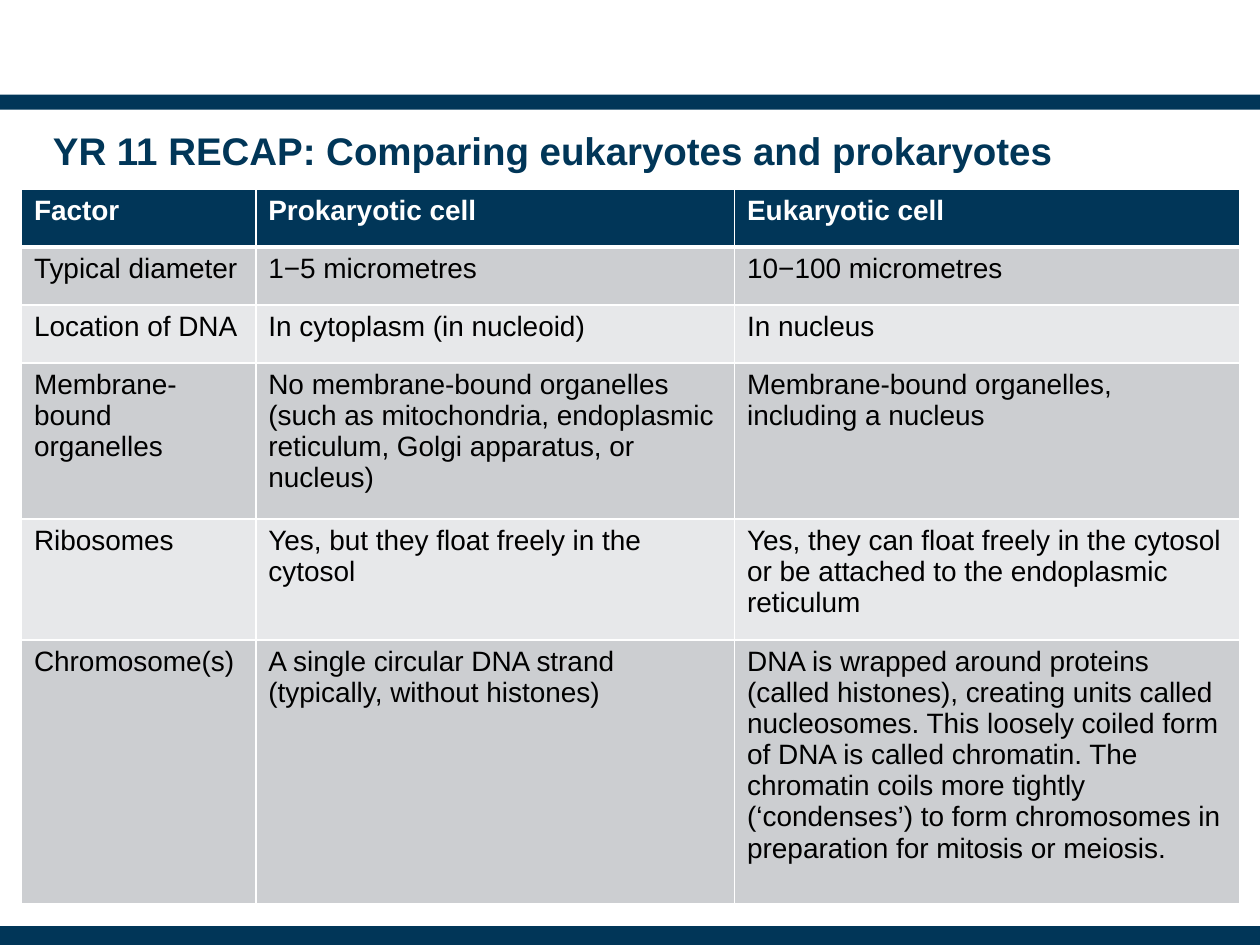
from lxml.etree import SubElement
from pptx import Presentation
from pptx.dml.color import RGBColor
from pptx.enum.shapes import MSO_SHAPE as Shape
from pptx.enum.text import MSO_ANCHOR as Anchor, MSO_AUTO_SIZE as AutoSize, PP_ALIGN as Align
from pptx.oxml.ns import qn
from pptx.util import Inches, Pt

NAVY, WHITE, BLACK = "013658", "FFFFFF", "000000"
BANDS = ("E7E8EA", "CCCED1")

COLUMN_WIDTHS = (1.86, 3.8, 4.01)
ROW_HEIGHTS = (0.46, 0.46, 0.46, 1.24, 0.96, 2.09)
COMPARISON = (
    ("Factor", "Prokaryotic cell", "Eukaryotic cell"),
    ("Typical diameter", "1−5 micrometres", "10−100 micrometres"),
    ("Location of DNA", "In cytoplasm (in nucleoid)", "In nucleus"),
    ("Membrane-bound organelles",
     "No membrane-bound organelles (such as mitochondria, endoplasmic "
     "reticulum, Golgi apparatus, or nucleus)",
     "Membrane-bound organelles, including a nucleus"),
    ("Ribosomes",
     "Yes, but they float freely in the cytosol",
     "Yes, they can float freely in the cytosol or be attached to the "
     "endoplasmic reticulum"),
    ("Chromosome(s)",
     "A single circular DNA strand (typically, without histones)",
     "DNA is wrapped around proteins (called histones), creating units called "
     "nucleosomes. This loosely coiled form of DNA is called chromatin. The "
     "chromatin coils more tightly (‘condenses’) to form chromosomes in "
     "preparation for mitosis or meiosis."),
)


def rgb(value):
    return RGBColor.from_string(value)


class RecapSlide:
    font_name = "Arial"

    def __init__(self, prs):
        self.s = prs.slides.add_slide(prs.slide_layouts[5])

    def style(self, p, size, color, bold):
        for r in p.runs:
            r.font.name = self.font_name
            r.font.size = Pt(size)
            r.font.bold = bold
            r.font.color.rgb = rgb(color)

    def bar(self, top, height):
        sp = self.s.shapes.add_shape(
            Shape.RECTANGLE, 0, Inches(top), Inches(10), Inches(height))
        sp.shadow.inherit = False
        sp.fill.solid()
        sp.fill.fore_color.rgb = rgb(NAVY)
        sp.line.fill.background()

    def title(self, text, left, top, width, height):
        sp = self.s.shapes.title
        sp.left, sp.top = Inches(left), Inches(top)
        sp.width, sp.height = Inches(width), Inches(height)
        tf = sp.text_frame
        tf.text = text
        tf.word_wrap = True
        tf.auto_size = AutoSize.NONE
        tf.vertical_anchor = Anchor.MIDDLE
        tf.margin_left = tf.margin_right = tf.margin_top = tf.margin_bottom = 0
        p = tf.paragraphs[0]
        p.alignment = Align.LEFT
        p.line_spacing = Pt(24)
        self.style(p, 22, NAVY, True)

    def borders(self, cell, top, bottom):
        tc_pr = cell._tc.get_or_add_tcPr()
        for side, width in (("L", 1), ("R", 1), ("T", top), ("B", bottom)):
            line = SubElement(tc_pr, qn(f"a:ln{side}"), w=str(Pt(width)))
            fill = SubElement(line, qn("a:solidFill"))
            SubElement(fill, qn("a:srgbClr"), val=WHITE)

    def table(self, rows, left, top, widths, heights):
        table = self.s.shapes.add_table(
            len(rows), len(widths), Inches(left), Inches(top),
            Inches(sum(widths)), Inches(sum(heights))).table
        for column, width in zip(table.columns, widths):
            column.width = Inches(width)
        for i, (texts, height) in enumerate(zip(rows, heights)):
            table.rows[i].height = Inches(height)
            header = i == 0
            for j, text in enumerate(texts):
                cell = table.cell(i, j)
                cell.text = text
                self.borders(cell, 3 if i == 1 else 1, 3 if header else 1)
                cell.fill.solid()
                cell.fill.fore_color.rgb = rgb(NAVY if header else BANDS[i % 2])
                self.style(cell.text_frame.paragraphs[0], 16,
                           WHITE if header else BLACK, header)


def main():
    prs = Presentation()
    prs.slide_width, prs.slide_height = Inches(10), Inches(7.5)
    recap = RecapSlide(prs)
    recap.bar(0.75, 0.12)
    recap.bar(7.35, 0.15)
    recap.title("YR 11 RECAP: Comparing eukaryotes and prokaryotes",
                0.42, 0.83, 9, 0.75)
    recap.table(COMPARISON, 0.17, 1.5, COLUMN_WIDTHS, ROW_HEIGHTS)
    prs.save("out.pptx")


if __name__ == "__main__":
    main()
